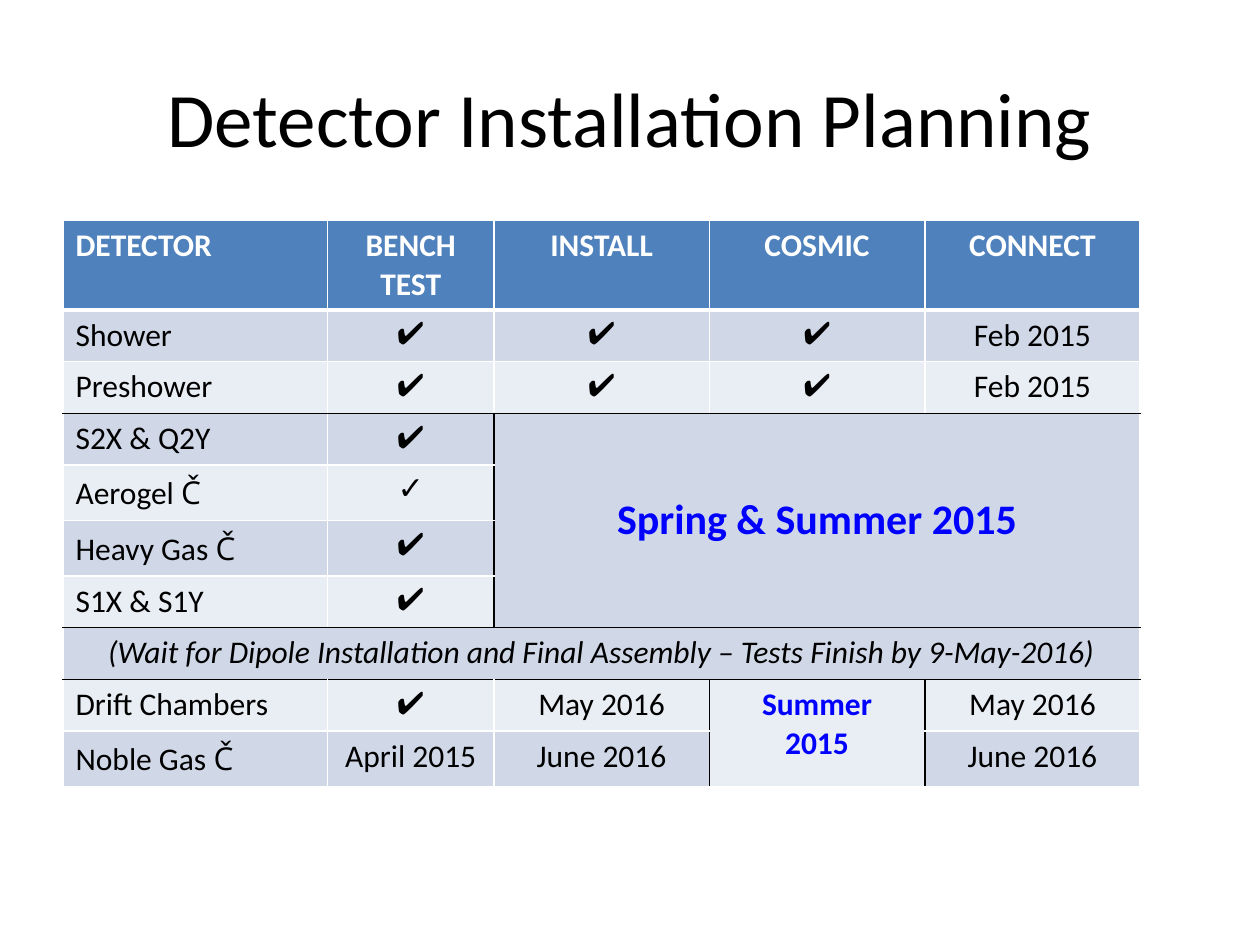
from dataclasses import dataclass

import lxml.etree
import pptx
import pptx.dml.color
import pptx.enum.text
import pptx.oxml.ns
import pptx.util

Inches = pptx.util.Inches
Pt = pptx.util.Pt
ALIGN = pptx.enum.text.PP_ALIGN
ANCHOR = pptx.enum.text.MSO_ANCHOR

WHITE, BLACK, BLUE = "FFFFFF", "000000", "0000FF"
HEADER_FILL, ODD_FILL, EVEN_FILL = "4F81BD", "D0D8E8", "E9EDF4"
DONE, PARTIAL = "✔", "✓"

COLUMN_WIDTHS = [2.1, 1.32, 1.71, 1.71, 1.71]
ROW_HEIGHT = 0.41
SCHEDULE = [
    ["DETECTOR", "BENCH TEST", "INSTALL", "COSMIC", "CONNECT"],
    ["Shower", DONE, DONE, DONE, "Feb 2015"],
    ["Preshower", DONE, DONE, DONE, "Feb 2015"],
    ["S2X & Q2Y", DONE],
    ["Aerogel Č", PARTIAL],
    ["Heavy Gas Č", DONE],
    ["S1X & S1Y", DONE],
    [],
    ["Drift Chambers", DONE, "May 2016", "", "May 2016"],
    ["Noble Gas Č", "April 2015", "June 2016", "", "June 2016"],
]
BLACK_ROW_EDGES = {3, 7, 8}
BLACK_COLUMN_EDGES = {(row, 2) for row in range(3, 7)} | {
    (row, edge) for row in (8, 9) for edge in (3, 4)
}


@dataclass
class Style:
    size: int = 18
    color: str = BLACK
    bold: bool = False
    italic: bool = False


@dataclass
class Period:
    text: str
    row: int
    column: int
    row_span: int
    column_span: int
    style: Style
    anchor: ANCHOR = ANCHOR.TOP


PERIODS = [
    Period("Spring & Summer 2015", 3, 2, 4, 3, Style(24, BLUE, bold=True), ANCHOR.MIDDLE),
    Period(
        "(Wait for Dipole Installation and Final Assembly – Tests Finish by 9-May-2016)",
        7, 0, 1, 5, Style(italic=True),
    ),
    Period("Summer\n2015", 8, 3, 2, 1, Style(color=BLUE, bold=True)),
]


def rgb(value: str) -> pptx.dml.color.RGBColor:
    return pptx.dml.color.RGBColor.from_string(value)


def font_for(text: str) -> str:
    return {DONE: "Arial", PARTIAL: "Arial", "Č": "Open Sans"}.get(text, "Calibri")


def format_runs(paragraph, style: Style) -> None:
    for run in paragraph.runs:
        font = run.font
        font.name = font_for(run.text)
        font.size = Pt(style.size)
        font.bold = style.bold
        font.italic = style.italic
        font.color.rgb = rgb(style.color)


def write_cell(cell, text: str, style: Style, alignment: ALIGN) -> None:
    label, symbol, _ = text.partition("Č")
    cell.text_frame.text = label
    if symbol:
        cell.text_frame.paragraphs[0].add_run().text = symbol
    for paragraph in cell.text_frame.paragraphs:
        paragraph.alignment = alignment
        format_runs(paragraph, style)


def add_border(cell, side: str, color: str, width: int) -> None:
    qn = pptx.oxml.ns.qn
    properties = cell._tc.get_or_add_tcPr()
    line = lxml.etree.SubElement(properties, qn(f"a:ln{side}"), w=str(Pt(width)))
    solid = lxml.etree.SubElement(line, qn("a:solidFill"))
    lxml.etree.SubElement(solid, qn("a:srgbClr"), val=color)


def add_borders(cell, row: int, column: int) -> None:
    right = column + (cell.span_width if cell.is_merge_origin else 1)
    bottom = row + (cell.span_height if cell.is_merge_origin else 1)
    for side, edge in (("L", column), ("R", right)):
        add_border(cell, side, BLACK if (row, edge) in BLACK_COLUMN_EDGES else WHITE, 1)
    for side, edge in (("T", row), ("B", bottom)):
        color = BLACK if edge in BLACK_ROW_EDGES else WHITE
        add_border(cell, side, color, 3 if edge == 1 else 1)


def add_title(slide) -> None:
    title = slide.shapes.title
    title.left, title.top = Inches(0.5), Inches(0.3)
    title.width, title.height = Inches(9), Inches(1.25)
    title.text_frame.text = "Detector Installation Planning"
    title.text_frame.vertical_anchor = ANCHOR.MIDDLE
    heading = title.text_frame.paragraphs[0]
    heading.alignment = ALIGN.CENTER
    format_runs(heading, Style(44))


def add_schedule(slide) -> None:
    schedule = slide.shapes.add_table(
        len(SCHEDULE), len(COLUMN_WIDTHS), Inches(0.5), Inches(1.75),
        Inches(sum(COLUMN_WIDTHS)), Inches(ROW_HEIGHT * len(SCHEDULE)),
    ).table
    for column, width in zip(schedule.columns, COLUMN_WIDTHS):
        column.width = Inches(width)
    for row in schedule.rows:
        row.height = Inches(ROW_HEIGHT)

    for row, entries in enumerate(SCHEDULE):
        style = Style(color=WHITE, bold=True) if row == 0 else Style()
        for column, text in enumerate(entries):
            alignment = ALIGN.CENTER if column else ALIGN.LEFT
            write_cell(schedule.cell(row, column), text, style, alignment)

    for period in PERIODS:
        cell = schedule.cell(period.row, period.column)
        last_row = period.row + period.row_span - 1
        last_column = period.column + period.column_span - 1
        cell.merge(schedule.cell(last_row, last_column))
        write_cell(cell, period.text, period.style, ALIGN.CENTER)
        cell.vertical_anchor = period.anchor

    for row in range(len(SCHEDULE)):
        fill = HEADER_FILL if row == 0 else ODD_FILL if row % 2 else EVEN_FILL
        for column in range(len(COLUMN_WIDTHS)):
            cell = schedule.cell(row, column)
            add_borders(cell, row, column)
            cell.fill.solid()
            cell.fill.fore_color.rgb = rgb(fill)


def main() -> None:
    presentation = pptx.Presentation()
    presentation.slide_width = Inches(10)
    presentation.slide_height = Inches(7.5)
    slide = presentation.slides.add_slide(presentation.slide_layouts.get_by_name("Title Only"))
    add_title(slide)
    add_schedule(slide)
    presentation.save("out.pptx")


if __name__ == "__main__":
    main()
